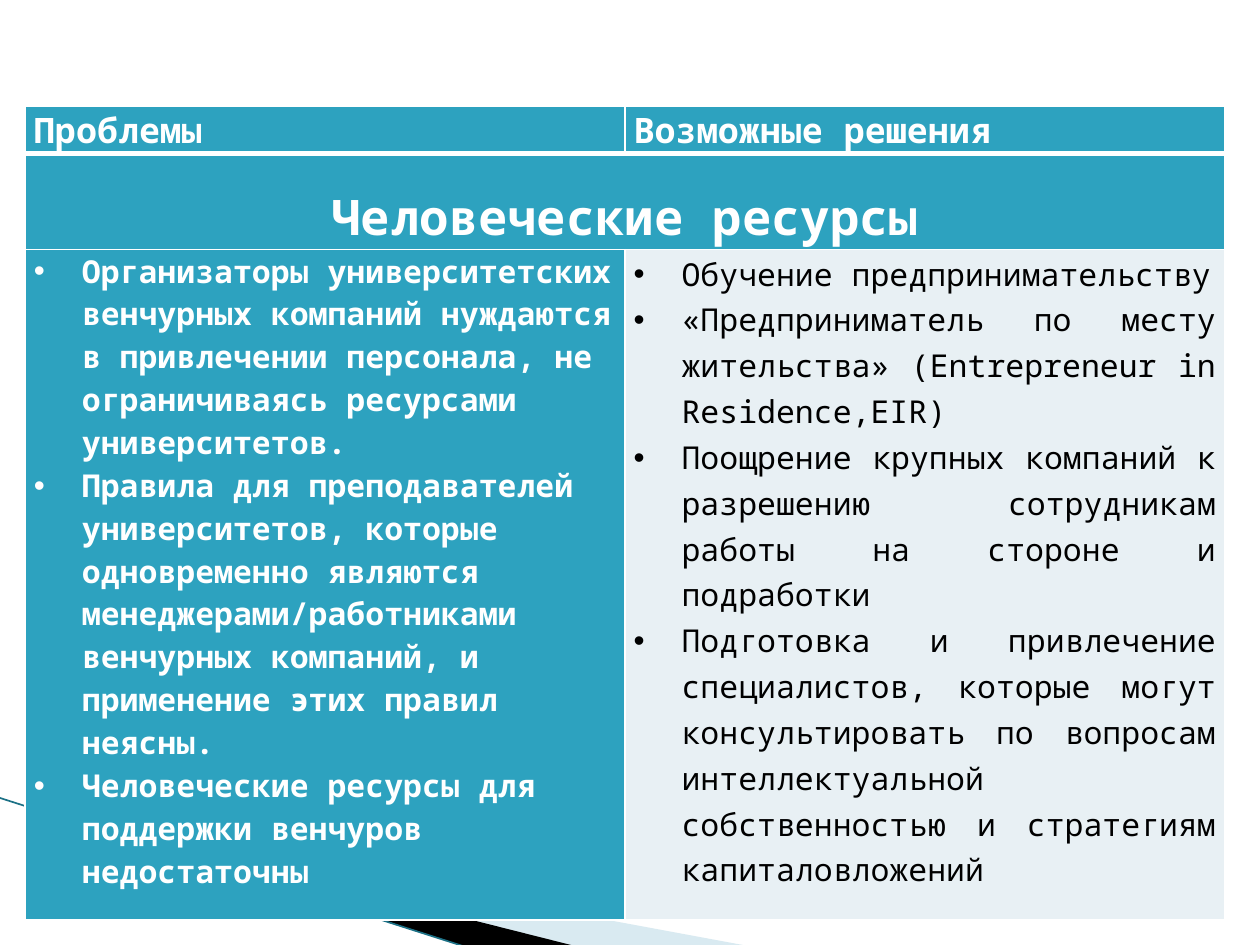
from dataclasses import dataclass

from lxml import etree
from pptx import Presentation
from pptx.dml.color import RGBColor
from pptx.enum.shapes import MSO_CONNECTOR
from pptx.enum.text import MSO_ANCHOR, PP_ALIGN
from pptx.oxml.ns import qn
from pptx.util import Inches, Pt

STRAIGHT = MSO_CONNECTOR.STRAIGHT
TOP, BOTTOM = MSO_ANCHOR.TOP, MSO_ANCHOR.BOTTOM
LEFT, CENTER, JUSTIFY = PP_ALIGN.LEFT, PP_ALIGN.CENTER, PP_ALIGN.JUSTIFY

FONT = "Noto Sans Mono"
TEAL, PALE, WHITE, BLACK = "2DA2BF", "E8F0F4", "FFFFFF", "000000"
MIST, DEEP_TEAL = "A0CBDC", "1C7186"
HANGING = 0.38


@dataclass(frozen=True)
class CellText:
    row: int
    column: int
    lines: tuple[str, ...]
    size: int
    fill: str = TEAL
    color: str = WHITE
    bold: bool = True
    align: PP_ALIGN = LEFT
    anchor: MSO_ANCHOR = TOP
    bulleted: bool = False
    spacing: float = 1.0


@dataclass(frozen=True)
class Ribbon:
    points: tuple[tuple[float, float], ...]
    color: str
    opacity: int = 100


RIBBONS = (
    Ribbon(((0.55, 6.51), (5.95, 7.51), (4.56, 7.51), (0.55, 6.5)), MIST, 40),
    Ribbon(((0.53, 6.49), (4.57, 7.51), (3.72, 7.52), (0.54, 6.5)), BLACK),
)

PROBLEMS = (
    "Организаторы университетских венчурных компаний нуждаются в привлечении персонала, не ограничиваясь ресурсами университетов.",
    "Правила для преподавателей университетов, которые одновременно являются менеджерами/работниками венчурных компаний, и применение этих правил неясны.",
    "Человеческие ресурсы для поддержки венчуров недостаточны",
)
SOLUTIONS = (
    "Обучение предпринимательству",
    "«Предприниматель по месту жительства» (Entrepreneur in Residence,EIR)",
    "Поощрение крупных компаний к разрешению сотрудникам работы на стороне и подработки",
    "Подготовка и привлечение специалистов, которые могут консультировать по вопросам интеллектуальной собственностью и стратегиям капиталовложений",
)
CELLS = (
    CellText(0, 0, ("Проблемы",), 20),
    CellText(0, 1, ("Возможные решения",), 20),
    CellText(1, 0, ("Человеческие ресурсы",), 28, align=CENTER, anchor=BOTTOM),
    CellText(2, 0, PROBLEMS, 18, bulleted=True),
    CellText(2, 1, SOLUTIONS, 18, PALE, BLACK, False, JUSTIFY, bulleted=True, spacing=1.07),
)
COLUMN_WIDTH = 4.76
ROW_HEIGHTS = (0.37, 0.76, 5.32)


def rgb(color: str) -> RGBColor:
    return RGBColor.from_string(color)


def draw_ribbon(slide, ribbon: Ribbon) -> None:
    start, *rest = [(Inches(x), Inches(y)) for x, y in ribbon.points]
    builder = slide.shapes.build_freeform(*start)
    builder.add_line_segments(rest, close=True)
    shape = builder.convert_to_shape()
    shape.shadow.inherit = False
    shape.fill.solid()
    shape.fill.fore_color.rgb = rgb(ribbon.color)
    shape.line.fill.background()
    if ribbon.opacity < 100:
        tone = shape.fill._xPr.find(qn("a:solidFill"))[0]
        etree.SubElement(tone, qn("a:alpha"), val=str(ribbon.opacity * 1000))


def draw_edge(slide) -> None:
    edge = slide.shapes.add_connector(
        STRAIGHT, Inches(-0.01), Inches(6.33), Inches(3.71), Inches(7.52)
    )
    edge.line.color.rgb = rgb(DEEP_TEAL)
    edge.line.width = Pt(0.95)
    etree.SubElement(edge._element.spPr, qn("a:effectLst"))


def set_borders(cell, widths: dict[str, float]) -> None:
    properties = cell._tc.get_or_add_tcPr()
    for index, (side, width) in enumerate(widths.items()):
        border = etree.Element(qn(f"a:{side}"), w=str(Pt(width)))
        solid = etree.SubElement(border, qn("a:solidFill"))
        etree.SubElement(solid, qn("a:srgbClr"), val=WHITE)
        properties.insert(index, border)


def add_bullet(paragraph) -> None:
    properties = paragraph._p.get_or_add_pPr()
    properties.set("marL", str(Inches(HANGING)))
    properties.set("indent", str(-Inches(HANGING)))
    etree.SubElement(properties, qn("a:buFont"), typeface="Arial")
    etree.SubElement(properties, qn("a:buChar"), char="•")


def fill_cell(cell, content: CellText) -> None:
    cell.margin_left = cell.margin_right = Inches(0.07)
    cell.margin_top = cell.margin_bottom = 0
    cell.vertical_anchor = content.anchor
    cell.fill.solid()
    cell.fill.fore_color.rgb = rgb(content.fill)
    for index, line in enumerate(content.lines):
        frame = cell.text_frame
        paragraph = frame.add_paragraph() if index else frame.paragraphs[0]
        paragraph.add_run().text = line
        paragraph.alignment = content.align
        paragraph.line_spacing = content.spacing
        if content.bulleted:
            add_bullet(paragraph)
        font = paragraph.font
        font.name = FONT
        font.size = Pt(content.size)
        font.bold = content.bold
        font.color.rgb = rgb(content.color)


def draw_table(slide) -> None:
    table = slide.shapes.add_table(
        len(ROW_HEIGHTS), 2, Inches(0.2), Inches(0.84),
        Inches(2 * COLUMN_WIDTH), Inches(sum(ROW_HEIGHTS)),
    ).table
    table.first_row = table.horz_banding = False
    for column in table.columns:
        column.width = Inches(COLUMN_WIDTH)
    for row, height in zip(table.rows, ROW_HEIGHTS):
        row.height = Inches(height)
    table.cell(1, 0).merge(table.cell(1, 1))
    for content in CELLS:
        fill_cell(table.cell(content.row, content.column), content)
    for row in range(len(ROW_HEIGHTS)):
        top, bottom = 3 if row == 1 else 1, 3 if row == 0 else 1
        for column in range(2):
            set_borders(table.cell(row, column), {"lnL": 1, "lnR": 1, "lnT": top, "lnB": bottom})


def main() -> None:
    deck = Presentation()
    deck.slide_width, deck.slide_height = Inches(10), Inches(7.5)
    slide = deck.slides.add_slide(deck.slide_layouts[6])
    for ribbon in RIBBONS:
        draw_ribbon(slide, ribbon)
    draw_edge(slide)
    draw_table(slide)
    deck.save("out.pptx")


if __name__ == "__main__":
    main()
